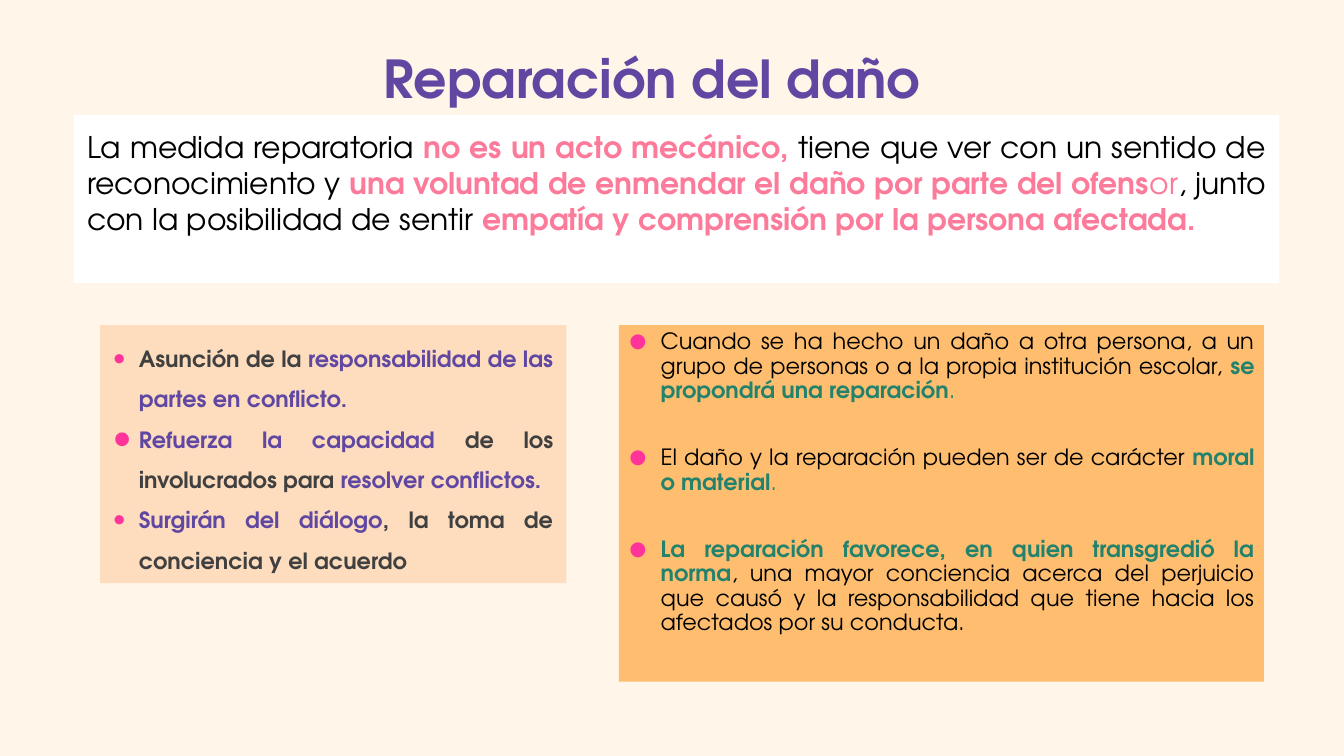
"""Build the slide on repairing harm: heading, statement and two bulleted panels."""
from dataclasses import dataclass
from typing import Optional

from lxml import etree
from pptx import Presentation
from pptx import util as u
from pptx.dml.color import RGBColor
from pptx.enum import shapes, text
from pptx.oxml.ns import qn


@dataclass(frozen=True)
class Theme:
    font: str = "TeX Gyre Adventor"
    bullet_font: str = "Arial"
    background: str = "FFF5E9"
    white: str = "FFFFFF"
    peach: str = "FEDDBF"
    orange: str = "FFBE6F"
    black: str = "000000"
    gray: str = "404040"
    purple: str = "5F47A2"
    pink: str = "FD7B9A"
    green: str = "22826C"
    bullet: str = "FF3399"
    heading_size: float = 28
    statement_size: float = 16
    panel_size: float = 12


@dataclass(frozen=True)
class Run:
    words: str
    color: str
    bold: bool = False


@dataclass(frozen=True)
class Paragraph:
    runs: tuple[Run, ...]
    bullet_percent: int = 0
    space_before: float = 0


@dataclass(frozen=True)
class Panel:
    left: float
    top: float
    columns: float
    rows: float
    size: float
    paragraphs: tuple[Paragraph, ...]
    fill: Optional[str] = None
    margins: tuple[float, float] = (0.1, 0.05)
    line_spacing: float = 1.0
    indent: float = 0
    align: text.PP_ALIGN = text.PP_ALIGN.JUSTIFY
    anchor: text.MSO_ANCHOR = text.MSO_ANCHOR.TOP


THEME = Theme()
WIDTH = u.Inches(10)
HEIGHT = WIDTH * 9 // 16
COLUMN, ROW = WIDTH / 100, HEIGHT / 100
PANELS_TOP = 43
BLANK_LINE_GAP = 23.3

HEADING = Panel(
    17.75, 6.4, 61.5, 8.9, THEME.heading_size,
    (Paragraph((Run("Reparación del daño", THEME.purple, True),)),),
    margins=(0.04, 0.04), line_spacing=0.9,
    align=text.PP_ALIGN.CENTER, anchor=text.MSO_ANCHOR.MIDDLE,
)
STATEMENT = Panel(
    5.5, 15.25, 89.7, 22.2, THEME.statement_size,
    (Paragraph((
        Run("La medida reparatoria ", THEME.black),
        Run("no es un acto mecánico, ", THEME.pink, True),
        Run("tiene que ver con un sentido de reconocimiento y ", THEME.black),
        Run("una voluntad de enmendar el daño por parte del ofens", THEME.pink, True),
        Run("or", THEME.pink),
        Run(", junto con la posibilidad de sentir ", THEME.black),
        Run("empatía y comprensión por la persona afectada.", THEME.pink, True),
    )),),
    fill=THEME.white, margins=(0.1, 0.1),
)
SITUATIONS = Panel(
    46.05, PANELS_TOP, 48, 47.15, THEME.panel_size,
    (
        Paragraph((
            Run("Cuando se ha hecho un daño a otra persona, a un grupo de personas "
                "o a la propia institución escolar, ", THEME.black),
            Run("se propondrá una reparación", THEME.green, True),
            Run(".", THEME.green),
        ), 245, 5.2),
        Paragraph((
            Run("El daño y la reparación pueden ser de carácter ", THEME.black),
            Run("moral o material", THEME.green, True),
            Run(".", THEME.green),
        ), 245, BLANK_LINE_GAP),
        Paragraph((
            Run("La reparación favorece, en quien transgredió la norma", THEME.green, True),
            Run(", una mayor conciencia acerca del perjuicio que causó y la responsabilidad "
                "que tiene hacia los afectados por su conducta.", THEME.black),
        ), 245, BLANK_LINE_GAP),
    ),
    fill=THEME.orange, margins=(0.07, 0.04), line_spacing=0.9, indent=0.24,
)
PRINCIPLES = Panel(
    7.45, PANELS_TOP, 34.7, 34.15, THEME.panel_size,
    (
        Paragraph((
            Run("Asunción de la ", THEME.gray, True),
            Run("responsabilidad de las partes en conflicto.", THEME.purple, True),
        ), 152),
        Paragraph((
            Run("Refuerza la capacidad ", THEME.purple, True),
            Run("de los involucrados para ", THEME.gray, True),
            Run("resolver conflictos.", THEME.purple, True),
        ), 225),
        Paragraph((
            Run("Surgirán del diálogo", THEME.purple, True),
            Run(", la toma de conciencia y el acuerdo", THEME.gray, True),
        ), 152),
    ),
    fill=THEME.peach, line_spacing=1.5, indent=0.19,
)


def apply(target, values: dict) -> None:
    """Set every named attribute on the target."""
    for name, value in values.items():
        setattr(target, name, value)


def add_bullet(line, percent: int, indent: float) -> None:
    """Give a paragraph a hanging coloured bullet."""
    props = line._p.get_or_add_pPr()
    props.set("marL", str(u.Inches(indent)))
    props.set("indent", str(-u.Inches(indent)))
    color = etree.SubElement(props, qn("a:buClr"))
    etree.SubElement(color, qn("a:srgbClr"), val=THEME.bullet)
    etree.SubElement(props, qn("a:buSzPct"), val=str(percent * 1000))
    etree.SubElement(props, qn("a:buFont"), typeface=THEME.bullet_font)
    etree.SubElement(props, qn("a:buChar"), char="•")


def write_paragraph(line, paragraph: Paragraph, panel: Panel) -> None:
    """Write the styled runs of one paragraph."""
    apply(line, {
        "alignment": panel.align,
        "line_spacing": panel.line_spacing,
        "space_before": u.Pt(paragraph.space_before),
    })
    if paragraph.bullet_percent:
        add_bullet(line, paragraph.bullet_percent, panel.indent)
    for run in paragraph.runs:
        piece = line.add_run()
        piece.text = run.words
        apply(piece.font, {"name": THEME.font, "size": u.Pt(panel.size), "bold": run.bold})
        piece.font.color.rgb = RGBColor.from_string(run.color)


def draw_panel(slide, panel: Panel) -> None:
    """Draw a text panel, filled when it has a colour."""
    place = [round(length) for length in (
        panel.left * COLUMN, panel.top * ROW, panel.columns * COLUMN, panel.rows * ROW)]
    if panel.fill:
        body = slide.shapes.add_shape(shapes.MSO_SHAPE.RECTANGLE, *place)
        body.shadow.inherit = False
        body.fill.solid()
        body.fill.fore_color.rgb = RGBColor.from_string(panel.fill)
        body.line.fill.background()
    else:
        body = slide.shapes.add_textbox(*place)
    frame = body.text_frame
    side, edge = (u.Inches(margin) for margin in panel.margins)
    apply(frame, {
        "word_wrap": True, "vertical_anchor": panel.anchor,
        "margin_left": side, "margin_right": side,
        "margin_top": edge, "margin_bottom": edge,
    })
    for index, paragraph in enumerate(panel.paragraphs):
        line = frame.add_paragraph() if index else frame.paragraphs[0]
        write_paragraph(line, paragraph, panel)


def main() -> None:
    """Assemble and save the slide."""
    deck = Presentation()
    apply(deck, {"slide_width": WIDTH, "slide_height": HEIGHT})
    slide = deck.slides.add_slide(deck.slide_layouts[6])
    slide.background.fill.solid()
    slide.background.fill.fore_color.rgb = RGBColor.from_string(THEME.background)
    for panel in (STATEMENT, HEADING, SITUATIONS, PRINCIPLES):
        draw_panel(slide, panel)
    deck.save("out.pptx")


if __name__ == "__main__":
    main()
